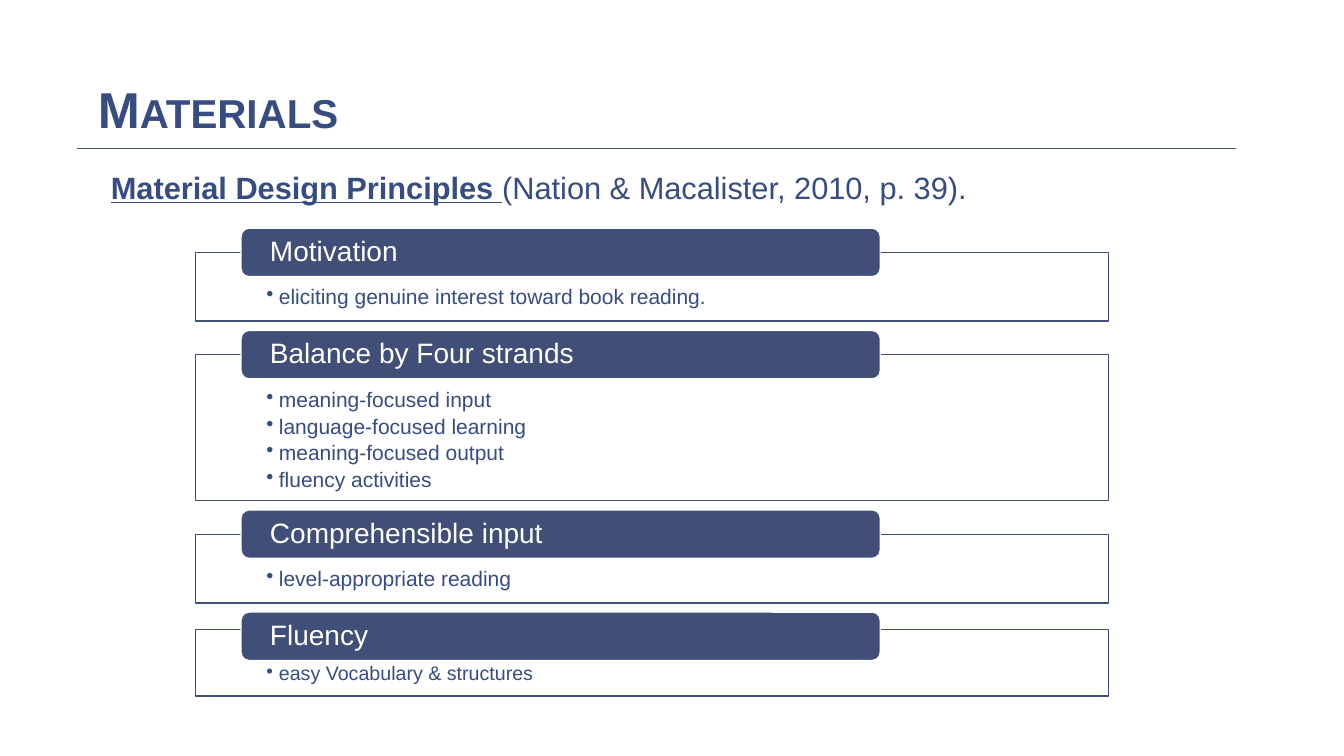
from lxml import etree
from pptx import Presentation
from pptx import util as u
from pptx.dml.color import RGBColor
from pptx.enum import shapes, text
from pptx.oxml.ns import qn

Pt = u.Pt
COLORS = {"ink": "374C81", "navy": "414E77", "white": "FFFFFF"}
SECTIONS = [
    # heading, bullets, bullet size, panel height, panel drop below tab top
    ("Motivation", ["eliciting genuine interest toward book reading."], 15, 49, 17.4),
    ("Balance by Four strands",
     ["meaning-focused input", "language-focused learning",
      "meaning-focused output", "fluency activities"], 15, 104.2, 17.4),
    ("Comprehensible input", ["level-appropriate reading"], 15, 49, 17.4),
    ("Fluency", ["easy Vocabulary & structures"], 14, 47.3, 12.6),
]
PANEL_LEFT, PANEL_WIDTH = 139.6, 652.4
TAB_LEFT, TAB_WIDTH, TAB_HEIGHT = 172.2, 456.6, 34.6
FIRST_TAB_TOP, SECTION_GAP = 163, 6.6


def color(name):
    return RGBColor.from_string(COLORS[name])


def add_text(para, words, size, ink="ink", **formats):
    span = para.add_run()
    span.text = words
    for key, value in {"name": "Arial", "size": Pt(size), **formats}.items():
        setattr(span.font, key, value)
    span.font.color.rgb = color(ink)
    return span


deck = Presentation()
deck.slide_width, deck.slide_height = Pt(960), Pt(540)
page = deck.slides.add_slide(deck.slide_layouts[1])

# Title and subheading
title, subheading = page.placeholders
for box, place, insets, anchor in [
    (title, (60.5, 31.7, 771, 72.7), (9.4, 5), text.MSO_ANCHOR.BOTTOM),
    (subheading, (72, 116.6, 816.5, 34), (7.2, 3.6), text.MSO_ANCHOR.TOP),
]:
    box.left, box.top, box.width, box.height = map(Pt, place)
    side, edge = map(Pt, insets)
    for key, value in {
        "margin_left": side, "margin_right": side, "margin_top": edge,
        "margin_bottom": edge, "vertical_anchor": anchor,
        "word_wrap": True, "auto_size": text.MSO_AUTO_SIZE.NONE,
    }.items():
        setattr(box.text_frame, key, value)

para = title.text_frame.paragraphs[0]
para.alignment = text.PP_ALIGN.LEFT
para.line_spacing = 0.85
heading = add_text(para, "Materials", 36, bold=True)
heading.font._element.set("cap", "small")

para = subheading.text_frame.paragraphs[0]
para.space_before = Pt(0)
props = para._p.get_or_add_pPr()
props.set("marL", "0")
props.set("indent", "0")
etree.SubElement(props, qn("a:buNone"))
add_text(para, "Material Design Principles ", 22, bold=True, underline=True)
add_text(para, "(Nation & Macalister, 2010, p. 39).", 22)

rule = page.shapes.add_connector(
    shapes.MSO_CONNECTOR.STRAIGHT, Pt(54.7), Pt(105.8), Pt(882.7), Pt(105.8))
rule.line.color.rgb = color("navy")
rule.line.width = Pt(0.5)
etree.SubElement(rule._element.spPr, qn("a:effectLst"))

# Outlined panels, each with a heading tab over its top edge
tab_top = FIRST_TAB_TOP
for name, bullets, size, height, drop in SECTIONS:
    panel_top = tab_top + drop
    panel = page.shapes.add_shape(
        shapes.MSO_SHAPE.RECTANGLE,
        Pt(PANEL_LEFT), Pt(panel_top), Pt(PANEL_WIDTH), Pt(height))
    tab = page.shapes.add_shape(
        shapes.MSO_SHAPE.ROUNDED_RECTANGLE,
        Pt(TAB_LEFT), Pt(tab_top), Pt(TAB_WIDTH), Pt(TAB_HEIGHT))
    for box, fill, line, side, top, anchor in [
        (panel, "white", "navy", 50.6, 24.5, text.MSO_ANCHOR.TOP),
        (tab, "navy", "white", 19, 0, text.MSO_ANCHOR.MIDDLE),
    ]:
        box.shadow.inherit = False
        box.fill.solid()
        box.fill.fore_color.rgb = color(fill)
        box.line.color.rgb = color(line)
        box.line.width = Pt(1)
        for key, value in {
            "margin_left": Pt(side), "margin_right": Pt(side),
            "margin_top": Pt(top), "margin_bottom": Pt(0),
            "vertical_anchor": anchor, "word_wrap": True,
        }.items():
            setattr(box.text_frame, key, value)

    para = tab.text_frame.paragraphs[0]
    para.alignment = text.PP_ALIGN.LEFT
    para.line_spacing = 0.9
    add_text(para, name, 20, "white")

    for index, words in enumerate(bullets):
        frame = panel.text_frame
        para = frame.add_paragraph() if index else frame.paragraphs[0]
        para.alignment = text.PP_ALIGN.LEFT
        para.line_spacing = 0.9
        para.space_after = Pt(3)
        props = para._p.get_or_add_pPr()
        props.set("marL", str(Pt(9)))
        props.set("indent", str(Pt(-9)))
        etree.SubElement(props, qn("a:buChar"), char="•")
        add_text(para, words, size)

    tab_top = panel_top + height + SECTION_GAP

deck.save("out.pptx")
